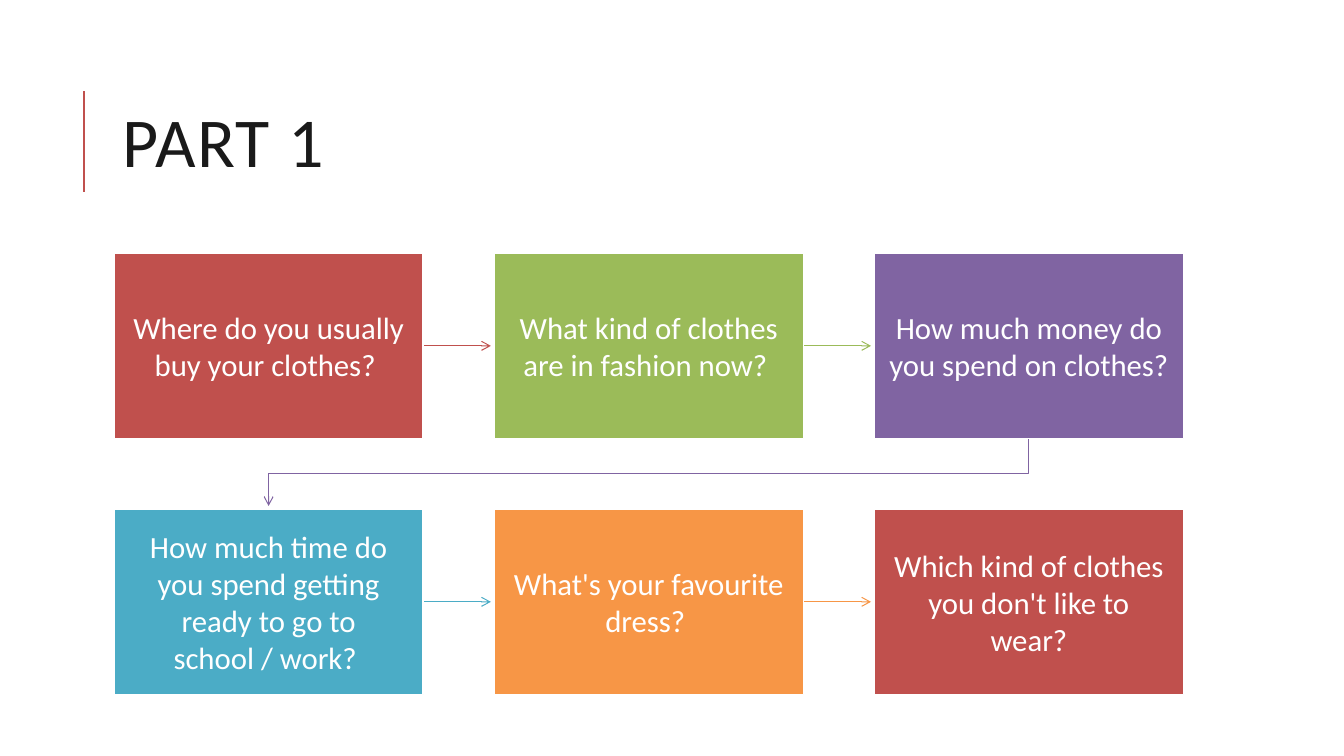
from dataclasses import dataclass
from lxml.etree import SubElement
from pptx import Presentation
from pptx.dml.color import RGBColor
from pptx.enum.shapes import MSO_CONNECTOR as Connector, MSO_SHAPE as Shape
from pptx.enum.text import MSO_ANCHOR as Anchor, MSO_AUTO_SIZE as AutoSize, PP_ALIGN as Align
from pptx.oxml.ns import qn
from pptx.util import Cm, Pt


@dataclass(frozen=True)
class Theme:
    font: str = "Calibri"
    title_size: int = 50
    question_size: int = 22
    ink: str = "1A1A1A"
    white: str = "FFFFFF"
    red: str = "C0504D"
    green: str = "9BBB59"
    purple: str = "8064A2"
    teal: str = "4BACC6"
    orange: str = "F79646"


THEME = Theme()
QUESTIONS = [
    ("Where do you usually buy your clothes? ", THEME.red),
    ("What kind of clothes are in fashion now? ", THEME.green),
    ("How much money do you spend on clothes? ", THEME.purple),
    ("How much time do you spend getting ready to go to school / work? ", THEME.teal),
    ("What's your favourite dress? ", THEME.orange),
    ("Which kind of clothes you don't like to wear?", THEME.red),
]
COLUMNS = 3
LEFT, TOP = 2.87, 6.38
BOX_WIDTH, BOX_HEIGHT = 7.8, 4.67
COLUMN_STEP, ROW_STEP = 9.58, 6.45
ARROW_GAP = 0.08
ELBOW_DROP = 0.89


class FlowSlide:
    """Draws on one slide in one theme; all lengths are in centimetres."""

    def __init__(self, slide, theme):
        self.slide, self.theme = slide, theme

    def add_run(self, paragraph, text, size, color):
        run = paragraph.add_run()
        run.text = text
        run.font.name = self.theme.font
        run.font.size = Pt(size)
        run.font.color.rgb = RGBColor.from_string(color)
        return run

    def style_line(self, outline, color, width, arrow=False):
        outline.line.color.rgb = RGBColor.from_string(color)
        outline.line.width = Pt(width)
        if arrow:
            SubElement(outline.line._get_or_add_ln(), qn("a:tailEnd"), type="arrow")

    def title(self, text, left, top, width, height):
        heading = self.slide.shapes.title
        heading.left, heading.top = Cm(left), Cm(top)
        heading.width, heading.height = Cm(width), Cm(height)
        frame = heading.text_frame
        frame.auto_size = AutoSize.NONE
        frame.vertical_anchor = Anchor.MIDDLE
        paragraph = frame.paragraphs[0]
        paragraph.alignment = Align.LEFT
        paragraph.line_spacing = 0.8
        run = self.add_run(paragraph, text, self.theme.title_size, self.theme.ink)
        run.font._element.set("spc", "100")

    def line(self, start, end, color, width, arrow=False):
        connector = self.slide.shapes.add_connector(
            Connector.STRAIGHT, *map(Cm, start), *map(Cm, end))
        self.style_line(connector, color, width, arrow)
        SubElement(connector._element.spPr, qn("a:effectLst"))

    def elbow_arrow(self, points, color, width):
        start, *corners = [(Cm(x), Cm(y)) for x, y in points]
        builder = self.slide.shapes.build_freeform(*start)
        builder.add_line_segments(corners, close=False)
        elbow = builder.convert_to_shape()
        elbow.shadow.inherit = False
        elbow.fill.background()
        self.style_line(elbow, color, width, arrow=True)

    def question_box(self, text, color, left, top):
        box = self.slide.shapes.add_shape(
            Shape.RECTANGLE, Cm(left), Cm(top), Cm(BOX_WIDTH), Cm(BOX_HEIGHT))
        box.shadow.inherit = False
        box.fill.solid()
        box.fill.fore_color.rgb = RGBColor.from_string(color)
        self.style_line(box, self.theme.white, 1.25)
        frame = box.text_frame
        frame.word_wrap = True
        frame.vertical_anchor = Anchor.MIDDLE
        frame.margin_left = frame.margin_right = Cm(0.38)
        frame.margin_top = frame.margin_bottom = Cm(0.4)
        paragraph = frame.paragraphs[0]
        paragraph.alignment = Align.CENTER
        self.add_run(paragraph, text, self.theme.question_size, self.theme.white)

    def arrow_to_next(self, color, left, top, row_ends):
        """Point right to the next box, or back to the start of the next row."""
        if row_ends:
            center, first_center = left + BOX_WIDTH / 2, LEFT + BOX_WIDTH / 2
            bottom = top + BOX_HEIGHT
            bend = bottom + ELBOW_DROP
            self.elbow_arrow([(center, bottom), (center, bend), (first_center, bend),
                              (first_center, top + ROW_STEP - ARROW_GAP)], color, 0.75)
        else:
            middle = top + BOX_HEIGHT / 2
            self.line((left + BOX_WIDTH, middle),
                      (left + COLUMN_STEP - ARROW_GAP, middle), color, 0.75, arrow=True)


def main():
    deck = Presentation()
    deck.slide_width, deck.slide_height = Cm(33.87), Cm(19.05)
    title_only = deck.slide_layouts[5]
    flow = FlowSlide(deck.slides.add_slide(title_only), THEME)

    flow.line((2.12, 4.83), (2.12, 2.29), THEME.red, 1.5)
    flow.title("PART 1", 2.84, 1.63, 27, 4.17)
    for index, (question, color) in enumerate(QUESTIONS):
        row, column = divmod(index, COLUMNS)
        left, top = LEFT + column * COLUMN_STEP, TOP + row * ROW_STEP
        if index < len(QUESTIONS) - 1:
            flow.arrow_to_next(color, left, top, row_ends=column == COLUMNS - 1)
        flow.question_box(question, color, left, top)

    deck.save("out.pptx")


if __name__ == "__main__":
    main()
